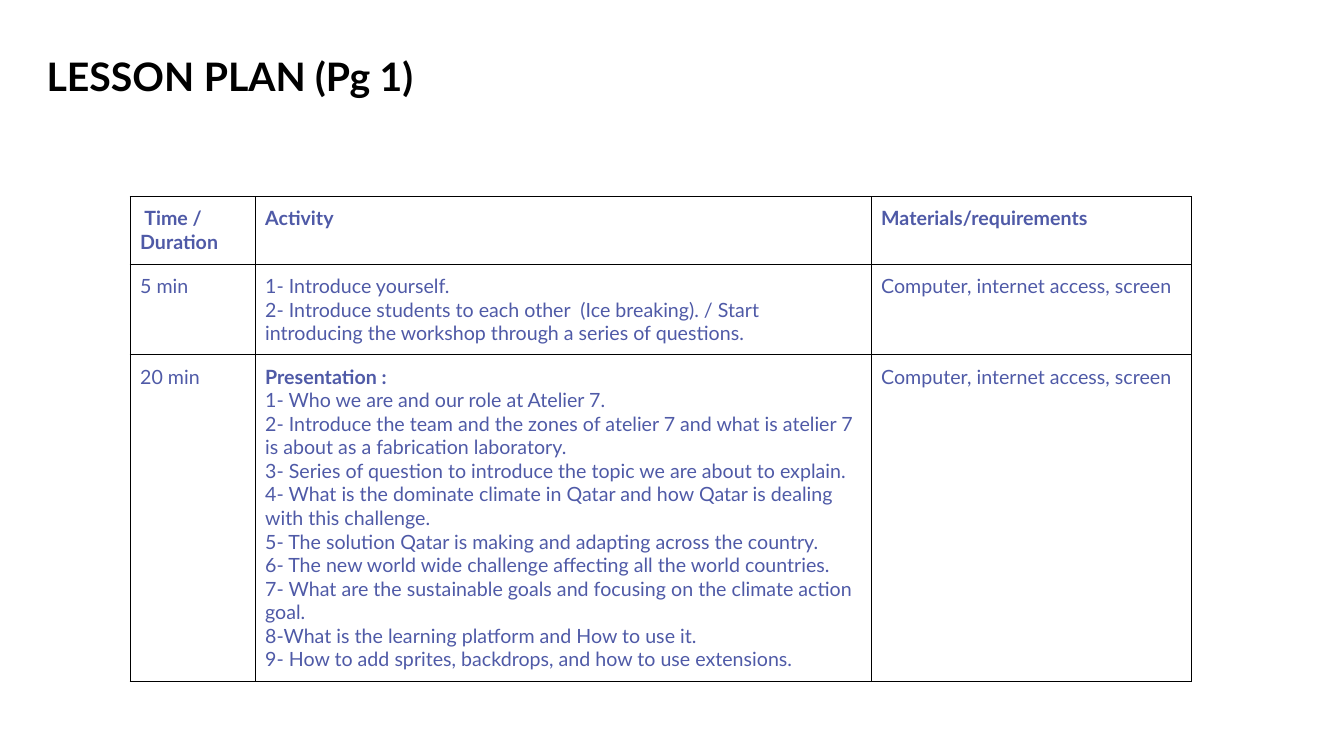
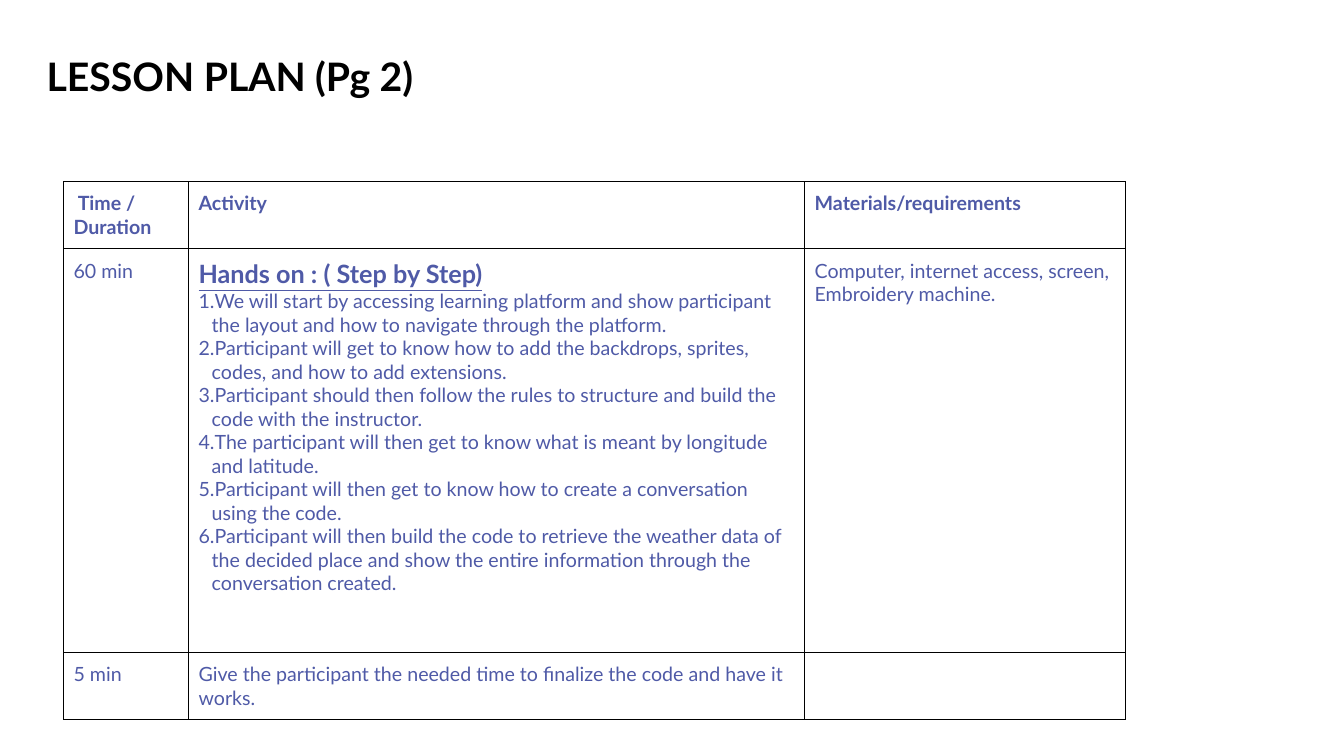
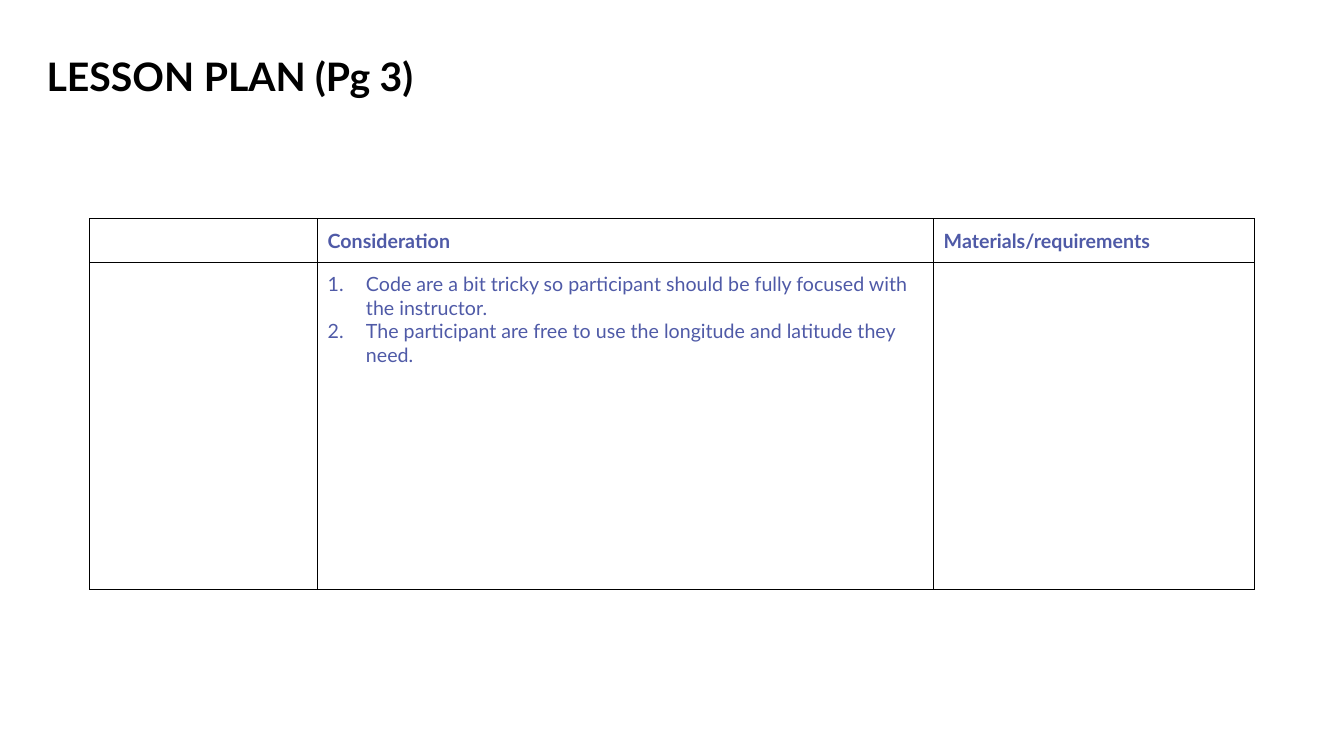
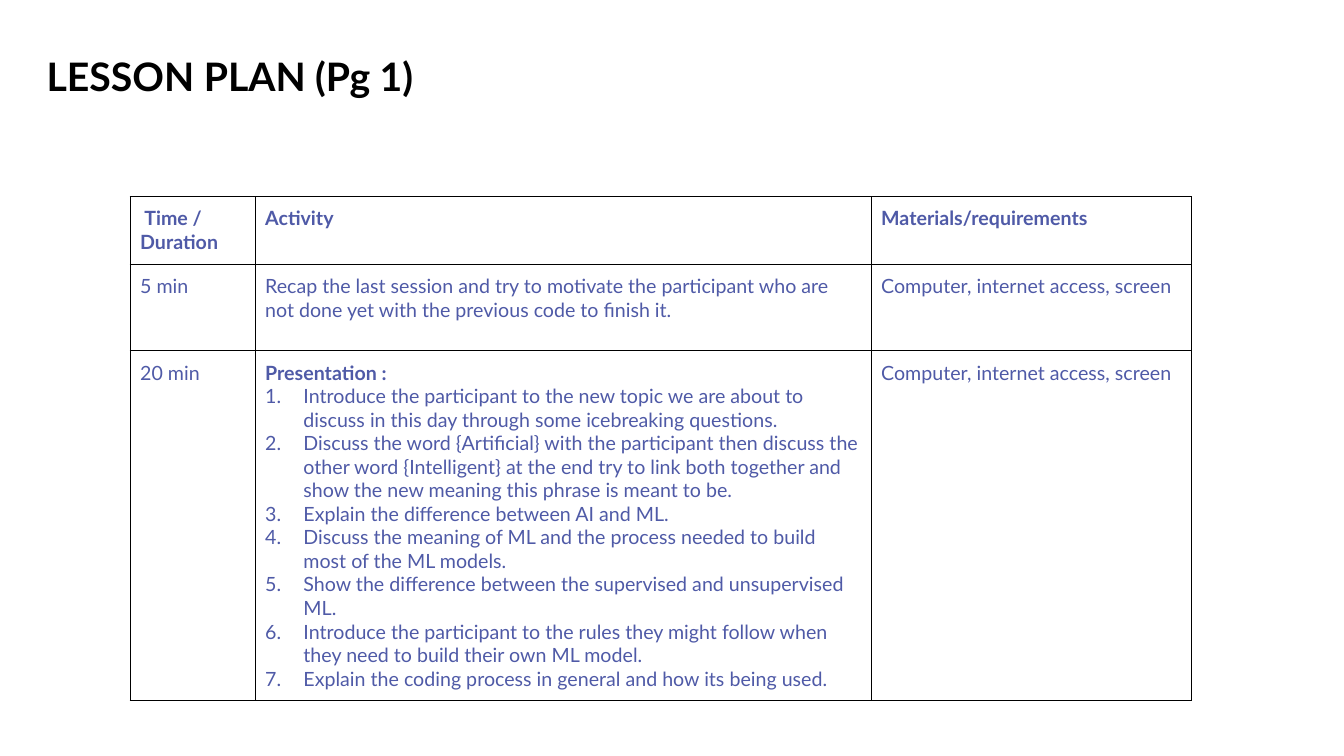
import dataclasses

import lxml.etree
import pptx
import pptx.dml.color
import pptx.enum.text
import pptx.oxml.ns
import pptx.util

Inches = pptx.util.Inches
Pt = pptx.util.Pt

BLACK = pptx.dml.color.RGBColor(0x00, 0x00, 0x00)
INDIGO = pptx.dml.color.RGBColor(0x4F, 0x5A, 0xA7)
FONT = "Lato"

TIME_COLUMN, ACTIVITY_COLUMN, MATERIALS_COLUMN = 1.24, 6.11, 3.18
PLAN_COLUMNS = [TIME_COLUMN, ACTIVITY_COLUMN, MATERIALS_COLUMN]
PLAN_HEADER = [" Time / Duration", "Activity", "Materials/requirements"]
MATERIALS = "Computer, internet access, screen"


@dataclasses.dataclass
class Line:
    """One paragraph of a table cell; an indent makes it a numbered step."""
    text: str
    size: int = 14
    bold: bool = False
    underline: bool = False
    indent: float = 0


def numbered(indent, *texts):
    return [Line(text, indent=indent) for text in texts]


class LessonPlan:
    def __init__(self):
        self.presentation = pptx.Presentation()
        self.presentation.slide_width = Inches(13.33)
        self.presentation.slide_height = Inches(7.5)
        self.slide = None

    def add_slide(self, page):
        layout = self.presentation.slide_layouts[6]
        self.slide = self.presentation.slides.add_slide(layout)
        self.add_title(f" LESSON PLAN (Pg {page})")

    def add_title(self, text):
        title = self.slide.shapes.add_textbox(
            Inches(0.27), Inches(0.47), Inches(8.83), Inches(0.57))
        text_frame = title.text_frame
        text_frame.word_wrap = True
        text_frame.auto_size = pptx.enum.text.MSO_AUTO_SIZE.SHAPE_TO_FIT_TEXT
        text_frame.text = text
        self.style_runs(text_frame.paragraphs[0], Line(text, size=28, bold=True), BLACK)

    def add_table(self, left, top, widths, heights, rows):
        """Draw rows of cells; the first row is the bold header."""
        table = self.slide.shapes.add_table(
            len(rows), len(widths), Inches(left), Inches(top),
            Inches(sum(widths)), Inches(sum(heights))).table
        table.first_row = False
        table.horz_banding = False
        for column, width in zip(table.columns, widths):
            column.width = Inches(width)
        for row_index, (height, contents) in enumerate(zip(heights, rows)):
            table.rows[row_index].height = Inches(height)
            for column_index, content in enumerate(contents):
                cell = table.cell(row_index, column_index)
                self.frame_cell(cell)
                if content:
                    self.fill_cell(cell, content, bold=row_index == 0)

    def frame_cell(self, cell):
        properties = cell._tc.get_or_add_tcPr()
        for side in ("a:lnL", "a:lnR", "a:lnT", "a:lnB"):
            border = lxml.etree.SubElement(
                properties, pptx.oxml.ns.qn(side), w=str(Pt(0.75)))
            fill = lxml.etree.SubElement(border, pptx.oxml.ns.qn("a:solidFill"))
            lxml.etree.SubElement(
                fill, pptx.oxml.ns.qn("a:srgbClr"), val=str(BLACK))
        cell.fill.background()

    def fill_cell(self, cell, content, bold):
        cell.margin_left = cell.margin_right = Inches(0.1)
        cell.margin_top = cell.margin_bottom = Inches(0.1)
        lines = [Line(content, bold=bold)] if isinstance(content, str) else content
        cell.text_frame.text = "\n".join(line.text for line in lines)
        for paragraph, line in zip(cell.text_frame.paragraphs, lines):
            if line.indent:
                self.number_paragraph(paragraph, line.indent)
            self.style_runs(paragraph, line, INDIGO)

    def number_paragraph(self, paragraph, indent):
        properties = paragraph._p.get_or_add_pPr()
        properties.set("marL", str(Inches(indent)))
        properties.set("indent", str(-Inches(indent)))
        lxml.etree.SubElement(
            properties, pptx.oxml.ns.qn("a:buAutoNum"), type="arabicPeriod")

    def style_runs(self, paragraph, line, color):
        for run in paragraph.runs:
            run.font.name = FONT
            run.font.size = Pt(line.size)
            run.font.bold = line.bold
            run.font.underline = line.underline
            run.font.color.rgb = color


def main():
    plan = LessonPlan()
    presentation_heading = Line("Presentation :", bold=True)

    # First session: introduction
    plan.add_slide(1)
    plan.add_table(1.29, 1.95, PLAN_COLUMNS, [0.67, 0.9, 3.24], [
        PLAN_HEADER,
        ["5 min", [
            Line("1- Introduce yourself."),
            Line("2- Introduce students to each other  (Ice breaking). / Start "
                 "introducing the workshop through a series of questions."),
        ], MATERIALS],
        ["20 min", [
            presentation_heading,
            Line("1- Who we are and our role at Atelier 7."),
            Line("2- Introduce the team and the zones of atelier 7 and what is "
                 "atelier 7 is about as a fabrication laboratory."),
            Line("3- Series of question to introduce the topic we are about to explain."),
            Line("4- What is the dominate climate in Qatar and how Qatar is "
                 "dealing with this challenge."),
            Line("5- The solution Qatar is making and adapting across the country."),
            Line("6- The new world wide challenge affecting all the world countries."),
            Line("7- What are the sustainable goals and focusing on the climate "
                 "action goal."),
            Line("8-What is the learning platform and How to use it."),
            Line("9- How to add sprites, backdrops, and how to use extensions."),
        ], MATERIALS],
    ])

    # First session: hands on
    plan.add_slide(2)
    plan.add_table(0.63, 1.8, PLAN_COLUMNS, [0.67, 4, 0.67], [
        PLAN_HEADER,
        ["60 min", [
            Line("Hands on : ( Step by Step)", size=18, bold=True, underline=True),
            *numbered(
                0.13,
                "We will start by accessing learning platform and show participant "
                "the layout and how to navigate through the platform.",
                "Participant will get to know how to add the backdrops, sprites, "
                "codes, and how to add extensions.",
                "Participant should then follow the rules to structure and build "
                "the code with the instructor.",
                "The participant will then get to know what is meant by longitude "
                "and latitude.",
                "Participant will then get to know how to create a conversation "
                "using the code.",
                "Participant will then build the code to retrieve the weather data "
                "of the decided place and show the entire information through the "
                "conversation created."),
        ], MATERIALS + ", Embroidery machine."],
        ["5 min",
         "Give the participant the needed time to finalize the code and have it works.",
         ""],
    ])

    # First session: considerations
    plan.add_slide(3)
    plan.add_table(
        0.89, 2.17, [2.26, ACTIVITY_COLUMN, MATERIALS_COLUMN], [0.43, 3.24], [
            ["", "Consideration", "Materials/requirements"],
            ["", numbered(
                0.38,
                "Code are a bit tricky so participant should be fully focused with "
                "the instructor.",
                "The participant are free to use the longitude and latitude they need."),
             ""],
        ])

    # Second session: introduction
    plan.add_slide(1)
    plan.add_table(1.29, 1.95, PLAN_COLUMNS, [0.67, 0.86, 3.47], [
        PLAN_HEADER,
        ["5 min",
         "Recap the last session and try to motivate the participant who are not "
         "done yet with the previous code to finish it.",
         MATERIALS],
        ["20 min", [
            presentation_heading,
            *numbered(
                0.38,
                "Introduce the participant to the new topic we are about to discuss "
                "in this day through some icebreaking questions.",
                "Discuss the word {Artificial} with the participant then discuss the "
                "other word {Intelligent} at the end try to link both together and "
                "show the new meaning this phrase is meant to be.",
                "Explain the difference between AI and ML.",
                "Discuss the meaning of ML and the process needed to build most of "
                "the ML models.",
                "Show the difference between the supervised and unsupervised ML.",
                "Introduce the participant to the rules they might follow when they "
                "need to build their own ML model.",
                "Explain the coding process in general and how its being used."),
        ], MATERIALS],
    ])

    plan.presentation.save("out.pptx")


if __name__ == "__main__":
    main()
